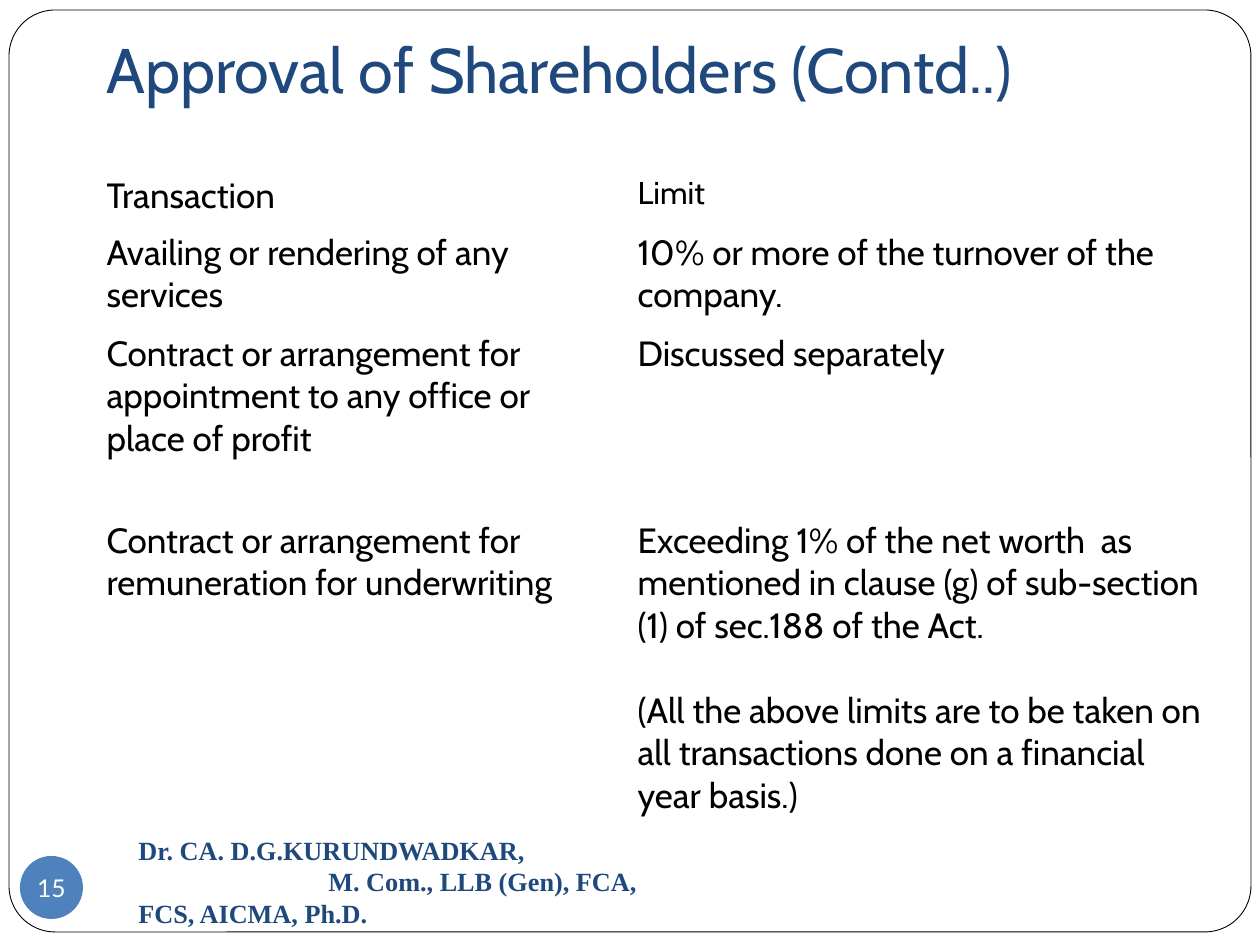
from pptx import Presentation
from pptx.dml.color import RGBColor
from pptx.enum.shapes import MSO_SHAPE
from pptx.enum.text import MSO_ANCHOR, PP_ALIGN
from pptx.oxml.ns import qn
from pptx.util import Emu, Pt

COLORS = {"white": "FFFFFF", "black": "000000", "navy": "1F497D", "blue": "4F81BD"}
HEADING_FONT = "Cabin"
NO_GRID_STYLE = "{2D5ABB26-0587-4C30-8999-92F81FD0307C}"
ROWS = [
    (["Transaction"], ["Limit"]),
    (["Availing or rendering of any services"],
     ["10% or more of the turnover of the company."]),
    (["Contract or arrangement for appointment to any office or place of profit"],
     ["Discussed separately"]),
    (["Contract or arrangement for remuneration for underwriting"],
     ["Exceeding 1% of the net worth  as mentioned in clause (g) of sub-section (1) of sec.188 of the Act.",
      "(All the above limits are to be taken on all transactions done on a financial year basis.)"]),
]


def px(value):
    """Turn whole pixels into EMU."""
    return Emu(round(value * 914400 / 126))


def color(name):
    """Look up a named colour."""
    return RGBColor.from_string(COLORS[name])


def write(text_frame, lines, size, font, color_name, bold=False):
    """Set the text and format all its runs."""
    text_frame.text = "\n".join(lines)
    text_frame.word_wrap = True
    for paragraph in text_frame.paragraphs:
        for run in paragraph.runs:
            run.font.size = Pt(size)
            run.font.name = font
            run.font.bold = bold
            run.font.color.rgb = color(color_name)


def add_shape(slide, kind, box, fill):
    """Add a filled preset shape without shadow or outline."""
    shape = slide.shapes.add_shape(kind, *map(px, box))
    shape.shadow.inherit = False
    shape.fill.solid()
    shape.fill.fore_color.rgb = color(fill)
    shape.line.fill.background()
    return shape


def add_frame(slide, box):
    """Draw the rounded page border."""
    frame = add_shape(slide, MSO_SHAPE.ROUNDED_RECTANGLE, box, "white")
    frame.adjustments[0] = 0.05
    frame.line.color.rgb = color("black")
    frame.line.width = Pt(0.5)


def add_title(slide, box):
    """Place the title, raised by its closing line break."""
    text_frame = slide.shapes.add_textbox(*map(px, box)).text_frame
    write(text_frame, ["Approval of Shareholders (Contd..)\v"], 36, HEADING_FONT, "navy")
    text_frame.vertical_anchor = MSO_ANCHOR.BOTTOM
    text_frame.margin_bottom = px(13)
    text_frame.paragraphs[0].font.size = Pt(36)
    text_frame.paragraphs[0].font.name = HEADING_FONT


def add_limits_table(slide, box, column_widths, row_heights):
    """Place the borderless table of transactions and limits."""
    table = slide.shapes.add_table(len(ROWS), len(column_widths), *map(px, box)).table
    table.first_row = False
    table.horz_banding = False
    table._tbl.tblPr.find(qn("a:tableStyleId")).text = NO_GRID_STYLE
    for column, width in zip(table.columns, column_widths):
        column.width = px(width)
    for row, height, texts in zip(table.rows, row_heights, ROWS):
        row.height = px(height)
        for cell, lines in zip(row.cells, texts):
            cell.fill.background()
            size = 18 if lines == ["Limit"] else 20
            write(cell.text_frame, lines, size, HEADING_FONT, "black")
            for paragraph in cell.text_frame.paragraphs[1:]:
                paragraph.space_before = Pt(24)


def add_footer(slide, box):
    """Place the author line with its indented degrees."""
    text_frame = slide.shapes.add_textbox(*map(px, box)).text_frame
    lines = ["Dr. CA. D.G.KURUNDWADKAR,", "M. Com., LLB (Gen), FCA, FCS, AICMA, Ph.D."]
    write(text_frame, lines, 15, "Times New Roman", "navy", bold=True)
    text_frame.vertical_anchor = MSO_ANCHOR.MIDDLE
    properties = text_frame.paragraphs[1]._p.get_or_add_pPr()
    properties.set("marL", "0")
    properties.set("indent", str(px(190)))


def add_page_number(slide, box):
    """Place the page number in its disc."""
    disc = add_shape(slide, MSO_SHAPE.OVAL, box, "blue")
    text_frame = disc.text_frame
    write(text_frame, ["15"], 14, "Lato", "white")
    text_frame.word_wrap = False
    text_frame.vertical_anchor = MSO_ANCHOR.MIDDLE
    text_frame.margin_left = text_frame.margin_right = 0
    text_frame.margin_top = text_frame.margin_bottom = 0
    text_frame.paragraphs[0].alignment = PP_ALIGN.CENTER


def main():
    """Build and save the slide."""
    presentation = Presentation()
    presentation.slide_width, presentation.slide_height = px(1260), px(945)
    slide = presentation.slides.add_slide(presentation.slide_layouts[6])
    add_frame(slide, (9, 10, 1242, 922))
    add_title(slide, (94, 38, 1102, 157))
    add_limits_table(slide, (94, 168, 1124, 751), (531, 593), (57, 101, 187, 406))
    add_footer(slide, (126, 850, 546, 63))
    add_page_number(slide, (20, 856, 63, 63))
    presentation.save("out.pptx")


if __name__ == "__main__":
    main()
